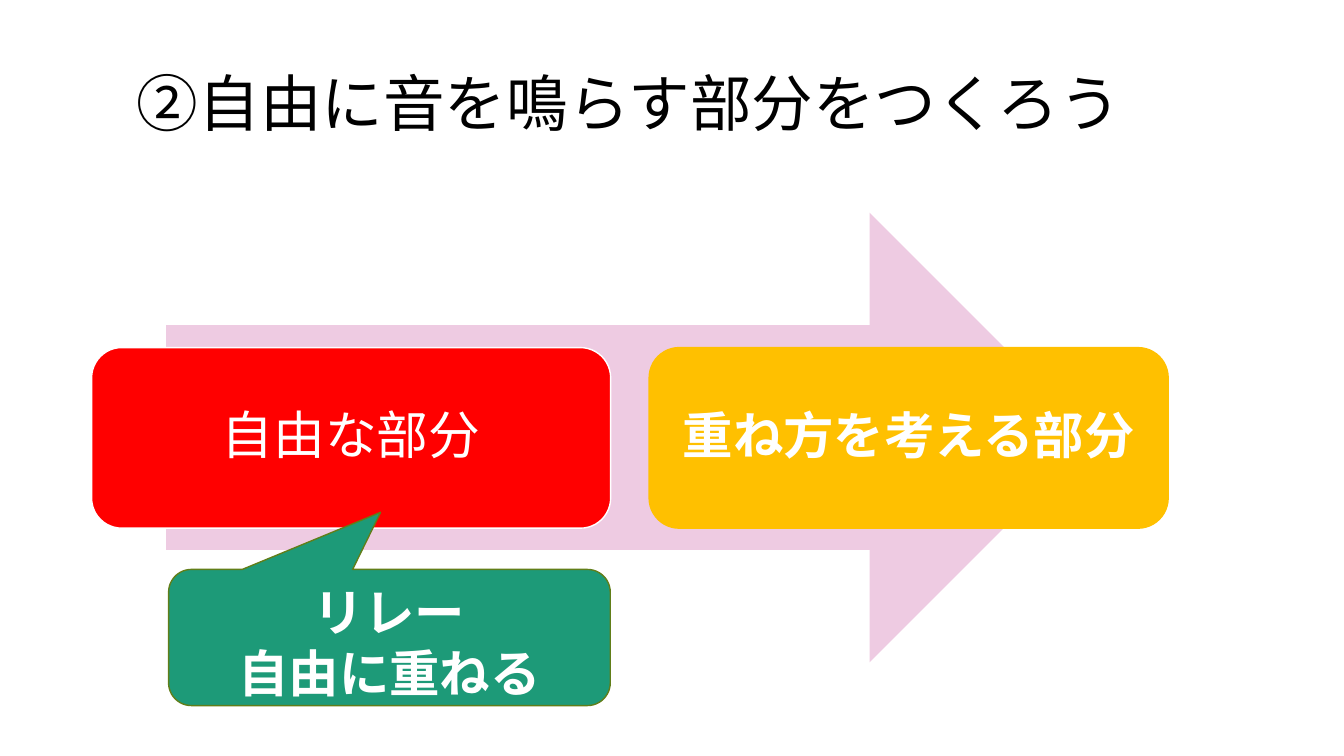
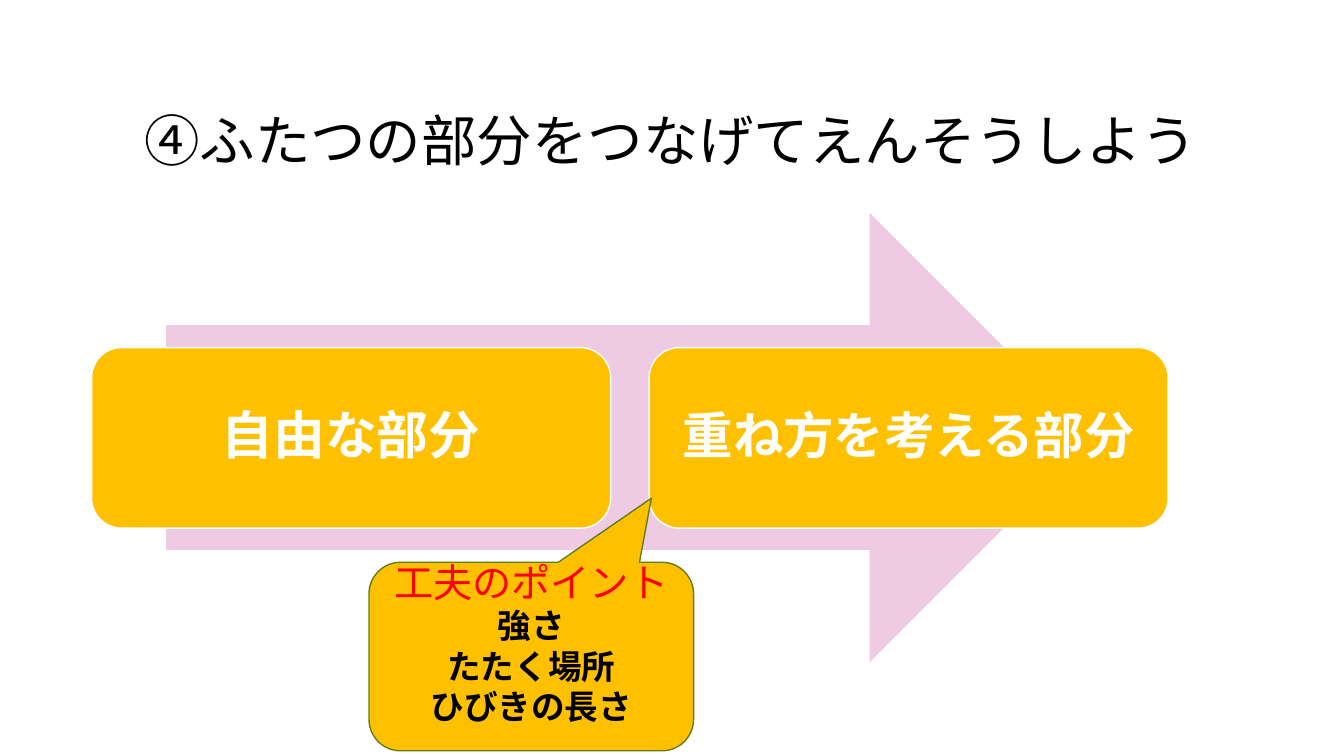
from dataclasses import dataclass

import pptx
import pptx.dml.color
import pptx.enum.shapes
import pptx.enum.text
import pptx.util

Cm = pptx.util.Cm
Kind = pptx.enum.shapes.MSO_SHAPE
Anchor = pptx.enum.text.MSO_ANCHOR

# Shared colours and fonts
BLACK, WHITE, RED = "000000", "FFFFFF", "FF0000"
GOLD, PINK, GREEN, OLIVE = "FFC000", "EECBE2", "1D9A78", "617E19"
FONT = "Arial"

# Shared layout in centimetres
ARROW = (4.19, 5.36, 23.39, 11.33)
LEFT, TOP, STEP = 2.31, 8.76, 14.05
WIDE, HIGH = 13.08, 4.55
ROUND = 0.167
TITLE_PAD = (0.3, 0.3, 0.3, 0.25)
STAGE_PAD = (0.38, 0.38, 0.38, 0.38)


@dataclass
class Run:
    text: str
    size: float
    color: str = WHITE
    bold: bool = False
    font: str = FONT


@dataclass
class Title:
    area: tuple[float, ...]
    runs: list[Run]


@dataclass
class Stage:
    run: Run
    fill: str = GOLD
    edge: str = WHITE


@dataclass
class Bubble:
    area: tuple[float, ...]
    tip: tuple[float, float]
    fill: str
    lines: list[Run]
    anchor: Anchor
    pad: tuple[float, ...]


@dataclass
class Page:
    title: Title
    stages: list[Stage]
    bubble: Bubble


def rgb(code: str) -> pptx.dml.color.RGBColor:
    return pptx.dml.color.RGBColor.from_string(code)


def write(shape, lines: list[list[Run]], pad: tuple[float, ...],
          anchor: Anchor = Anchor.MIDDLE, space: float = 1.0) -> None:
    frame = shape.text_frame
    frame.word_wrap = True
    frame.vertical_anchor = anchor
    frame.margin_left, frame.margin_top, frame.margin_right, frame.margin_bottom = map(Cm, pad)
    for index, runs in enumerate(lines):
        para = frame.add_paragraph() if index else frame.paragraphs[0]
        para.alignment = pptx.enum.text.PP_ALIGN.CENTER
        para.line_spacing = space
        for item in runs:
            run = para.add_run()
            run.text = item.text
            run.font.size = pptx.util.Pt(item.size)
            run.font.name = item.font
            run.font.bold = item.bold
            run.font.color.rgb = rgb(item.color)


def draw(slide, kind: Kind, area: tuple[float, ...], fill: str,
         edge: str | None = None, adjust: tuple[float, ...] = ()):
    shape = slide.shapes.add_shape(kind, *map(Cm, area))
    shape.shadow.inherit = False
    shape.fill.solid()
    shape.fill.fore_color.rgb = rgb(fill)
    if edge:
        shape.line.color.rgb = rgb(edge)
        shape.line.width = pptx.util.Pt(1)
    else:
        shape.line.fill.background()
    for index, value in enumerate(adjust):
        shape.adjustments[index] = value
    return shape


def build(deck, page: Page) -> None:
    slide = deck.slides.add_slide(deck.slide_layouts[6])

    # Title
    box = slide.shapes.add_textbox(*map(Cm, page.title.area))
    write(box, [page.title.runs], TITLE_PAD, space=1.13)

    # Arrow with the stages on it
    draw(slide, Kind.RIGHT_ARROW, ARROW, PINK, adjust=(0.5, 0.5))
    for index, stage in enumerate(page.stages):
        area = (LEFT + index * STEP, TOP, WIDE, HIGH)
        shape = draw(slide, Kind.ROUNDED_RECTANGLE, area, stage.fill, stage.edge, (ROUND,))
        write(shape, [[stage.run]], STAGE_PAD, space=0.9)

    # Speech bubble
    note = page.bubble
    shape = draw(slide, Kind.ROUNDED_RECTANGULAR_CALLOUT, note.area, note.fill,
                 OLIVE, (*note.tip, ROUND))
    write(shape, [[line] for line in note.lines], note.pad, note.anchor)


LAYER = Run("重ね方を考える部分", 36, bold=True)

PAGES = [
    Page(
        Title((2.11, 0.81, 27.51, 3.23),
              [Run("②自由に音を鳴らす部分をつくろう", 44, BLACK)]),
        [Stage(Run("自由な部分", 37), RED), Stage(LAYER, edge=GOLD)],
        Bubble((4.25, 14.35, 11.13, 3.43), (-0.02, -0.92), GREEN,
               [Run("リレー", 36, bold=True), Run("自由に重ねる", 36, bold=True)],
               Anchor.TOP, (0.25, 0.13, 0.25, 0.13)),
    ),
    Page(
        Title((0.23, 1.75, 33.35, 3.23),
              [Run("④", 39.6, BLACK, font="Calibri"),
               Run("ふたつの部分をつなげてえんそうしよう", 39.6, BLACK)]),
        [Stage(Run("自由な部分", 37, bold=True)), Stage(LAYER)],
        Bubble((9.3, 14.17, 8.18, 4.75), (0.37, -0.84), GOLD,
               [Run("工夫のポイント", 28, RED)]
               + [Run(text, 24, BLACK, True)
                  for text in ("強さ", "たたく場所", "ひびきの長さ")],
               Anchor.MIDDLE, (0.25, 0.13, 0.25, 0.86)),
    ),
]


def main() -> None:
    deck = pptx.Presentation()
    deck.slide_width, deck.slide_height = Cm(33.87), Cm(19.05)
    for page in PAGES:
        build(deck, page)
    deck.save("out.pptx")


if __name__ == "__main__":
    main()
